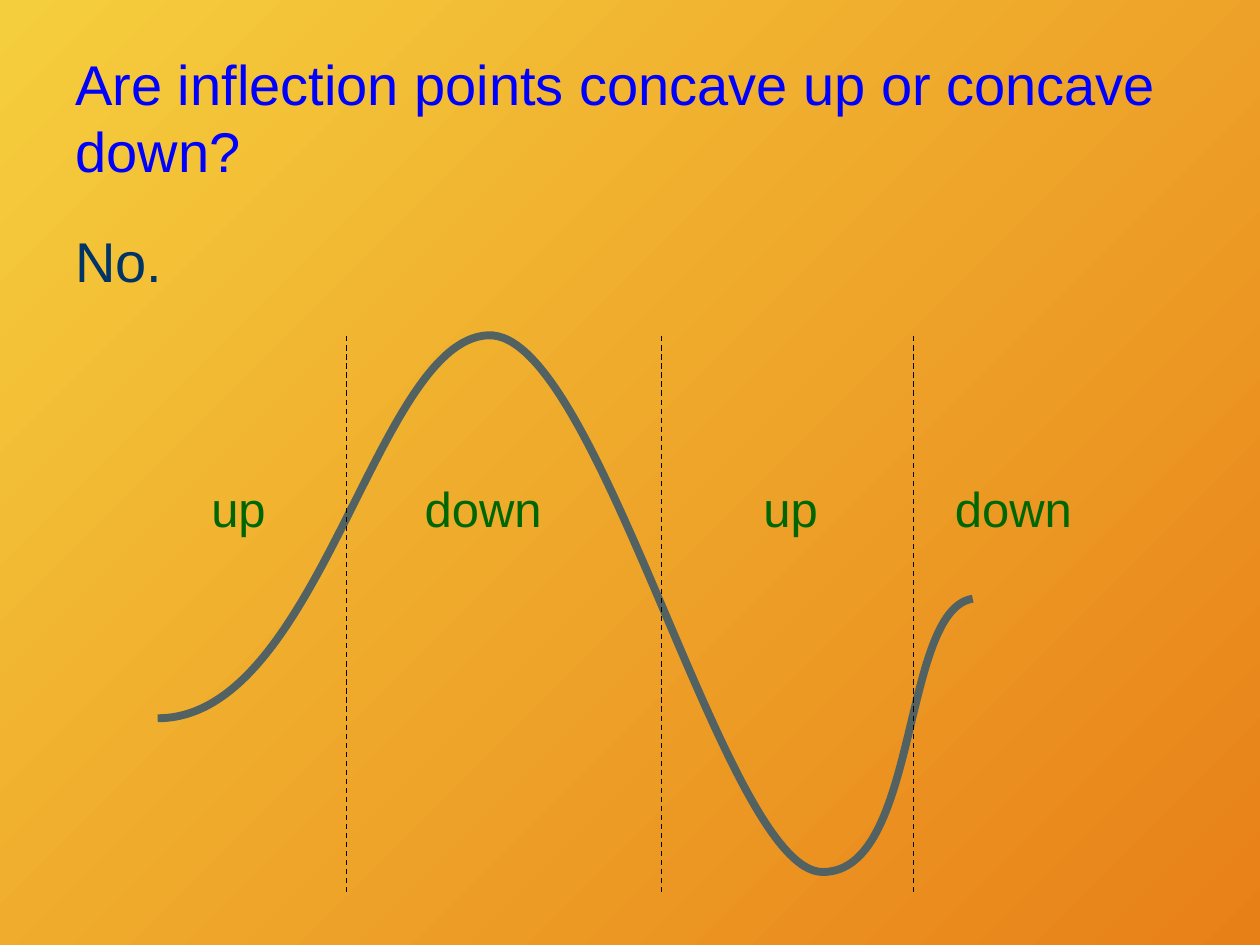
from dataclasses import dataclass

from lxml import etree
from pptx import Presentation
from pptx import util as u
from pptx.dml.color import RGBColor
from pptx.enum import dml, shapes, text
from pptx.oxml.ns import qn
from pptx.slide import Slide


@dataclass(frozen=True)
class Theme:
    font: str = "Arial"
    heading_size: float = 32
    label_size: float = 28
    question: str = "0000FF"
    answer: str = "003366"
    label: str = "006600"
    curve: str = "526263"
    divider: str = "000000"
    background: tuple[str, str] = ("F5CE3D", "E88018")


@dataclass(frozen=True)
class TextItem:
    words: str
    left: float
    top: float
    width: float
    height: float
    size: float
    color: str
    anchor: text.MSO_ANCHOR = text.MSO_ANCHOR.TOP
    space_before: float = 0
    wrap: bool = True


THEME = Theme()
DIVIDER_TOP, DIVIDER_BOTTOM = 6.78, 17.98
INFLECTIONS = (6.99, 13.34, 18.42)
CURVE_START = (3.18, 14.48)
# Each Bezier segment: two control points, then the end point (cm).
CURVE_SEGMENTS = (
    ((6.43, 14.48), (7.57, 6.88), (9.83, 6.76)),
    ((12.07, 6.63), (14.61, 17.6), (16.59, 17.58)),
    ((18.54, 17.58), (18.16, 12.29), (19.61, 12.07)),
)
HEADINGS = (
    TextItem("Are inflection points concave up or concave down?", 1.27, 0.76, 22.86, 3.18,
             THEME.heading_size, THEME.question, text.MSO_ANCHOR.MIDDLE),
    TextItem("No.", 1.27, 4.45, 22.86, 2.11,
             THEME.heading_size, THEME.answer, space_before=4),
)
LABELS = tuple(
    TextItem(words, left, 9.53, width, 1.45, THEME.label_size, THEME.label, wrap=False)
    for words, left, width in (
        ("up", 4.01, 1.63), ("down", 8.31, 2.9), ("up", 15.14, 1.63), ("down", 19, 2.9))
)


def rgb(value: str) -> RGBColor:
    return RGBColor.from_string(value)


def paint_background(page: Slide) -> None:
    fill = page.background.fill
    fill.gradient()
    fill.gradient_angle = 315
    for stop, color in zip(fill.gradient_stops, THEME.background):
        stop.color.rgb = rgb(color)


def add_text(page: Slide, item: TextItem) -> None:
    box = page.shapes.add_textbox(
        u.Cm(item.left), u.Cm(item.top), u.Cm(item.width), u.Cm(item.height))
    frame = box.text_frame
    frame.word_wrap = item.wrap
    frame.vertical_anchor = item.anchor
    if not item.wrap:
        frame.auto_size = text.MSO_AUTO_SIZE.SHAPE_TO_FIT_TEXT
    para = frame.paragraphs[0]
    para.text = item.words
    para.space_before = u.Pt(item.space_before)
    para.font.name = THEME.font
    para.font.size = u.Pt(item.size)
    para.font.color.rgb = rgb(item.color)


def add_curve(page: Slide) -> None:
    """Draw the vertices as a polyline, then join each three into a Bezier."""
    builder = page.shapes.build_freeform(*(u.Cm(value) for value in CURVE_START))
    builder.add_line_segments(
        [(u.Cm(x), u.Cm(y)) for segment in CURVE_SEGMENTS for x, y in segment], close=False)
    curve = builder.convert_to_shape()
    curve.shadow.inherit = False
    curve.fill.background()
    curve.line.color.rgb = rgb(THEME.curve)
    curve.line.width = u.Pt(4.5)
    lines = list(curve.element.iter(qn("a:lnTo")))
    outline = lines[0].getparent()
    for first in range(0, len(lines), 3):
        bezier = etree.SubElement(outline, qn("a:cubicBezTo"))
        for line in lines[first:first + 3]:
            bezier.append(line[0])
            outline.remove(line)


def add_divider(page: Slide, x: float) -> None:
    divider = page.shapes.add_connector(
        shapes.MSO_CONNECTOR.STRAIGHT,
        u.Cm(x), u.Cm(DIVIDER_TOP), u.Cm(x), u.Cm(DIVIDER_BOTTOM))
    divider.line.color.rgb = rgb(THEME.divider)
    divider.line.width = u.Pt(0.75)
    divider.line.dash_style = dml.MSO_LINE.DASH
    etree.SubElement(divider.element.spPr, qn("a:effectLst"))


def main() -> None:
    deck = Presentation()
    deck.slide_width, deck.slide_height = u.Cm(25.4), u.Cm(19.05)
    page = deck.slides.add_slide(deck.slide_layouts[6])
    paint_background(page)
    for heading in HEADINGS:
        add_text(page, heading)
    add_curve(page)
    for x in INFLECTIONS:
        add_divider(page, x)
    for label in LABELS:
        add_text(page, label)
    deck.save("out.pptx")


if __name__ == "__main__":
    main()
